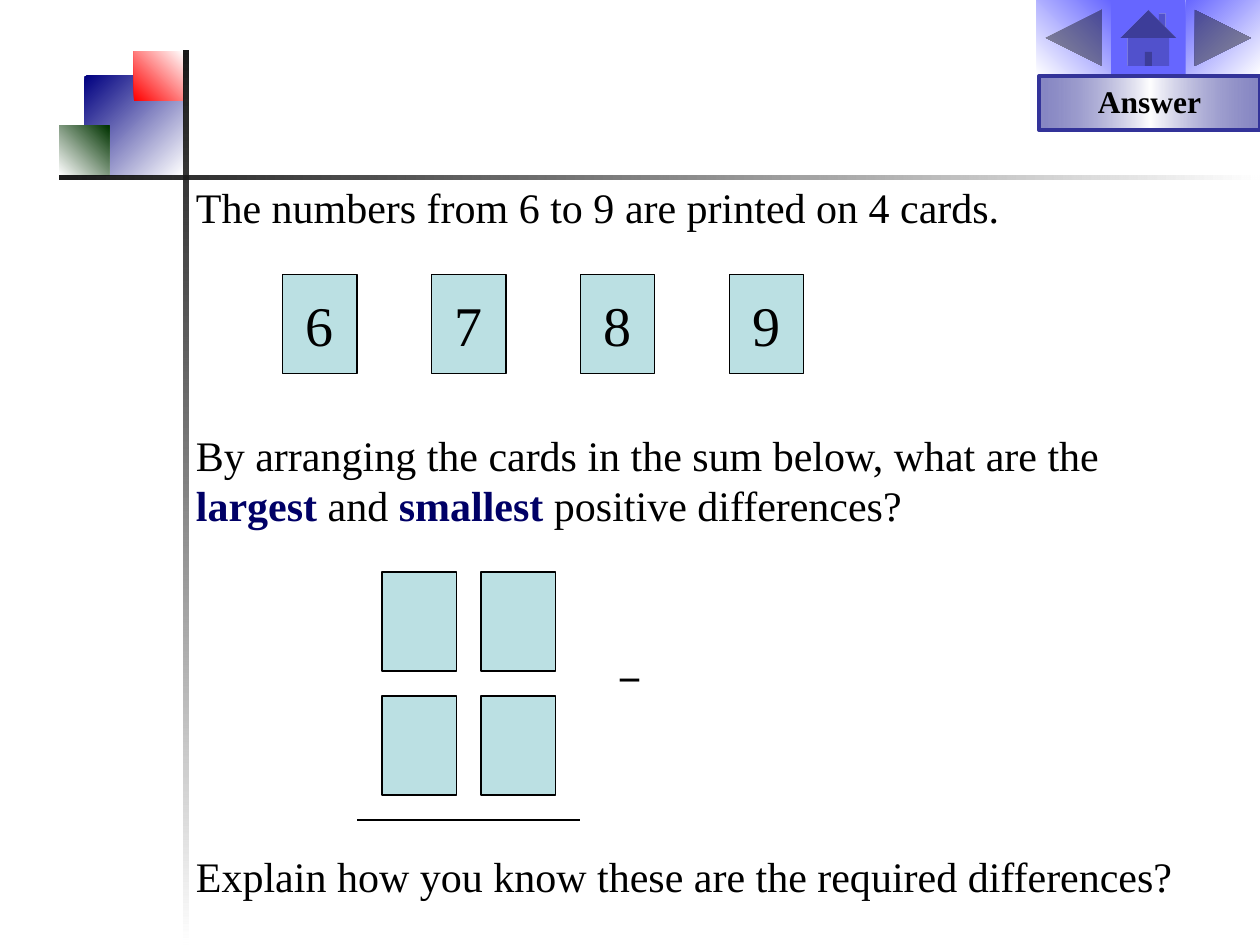
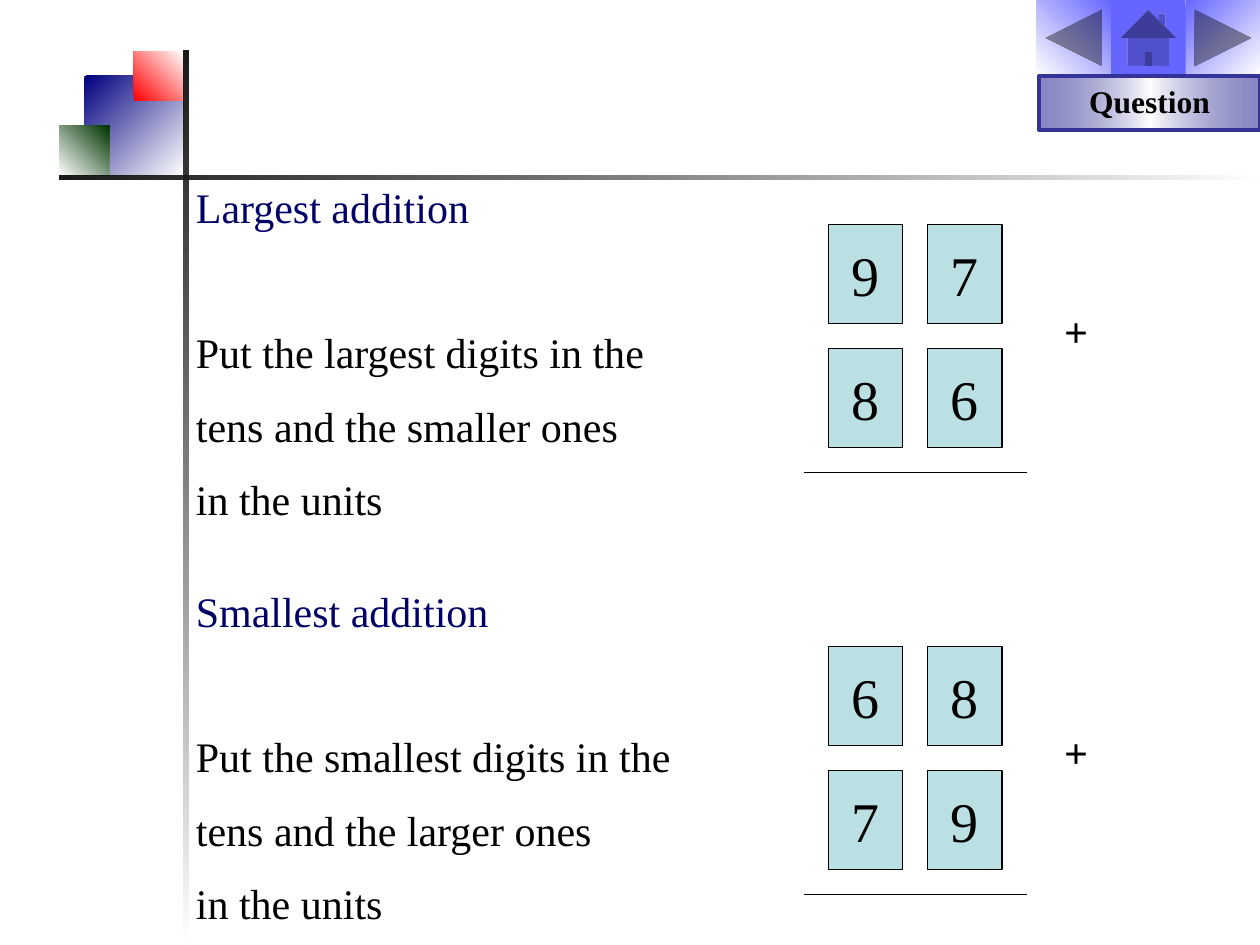
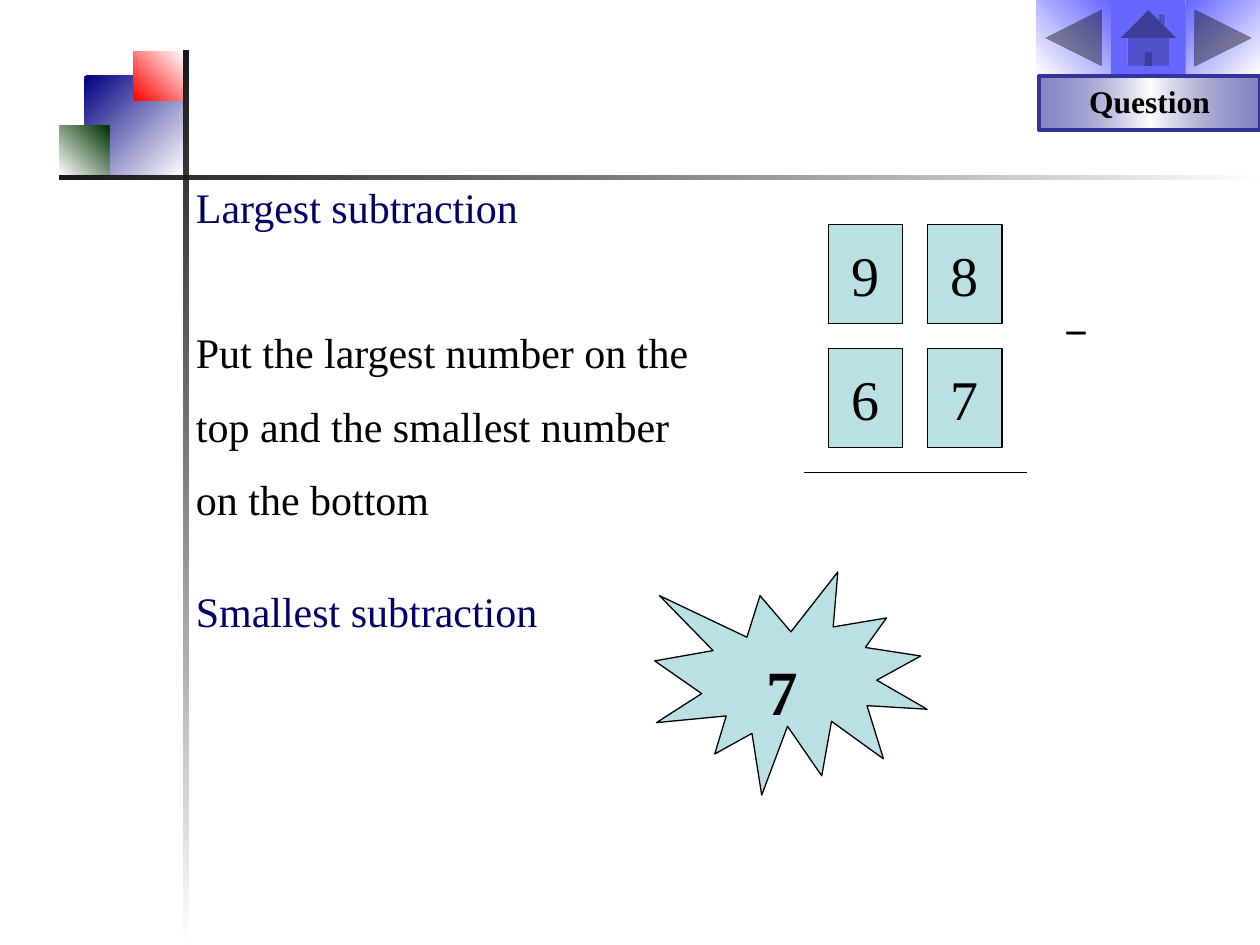
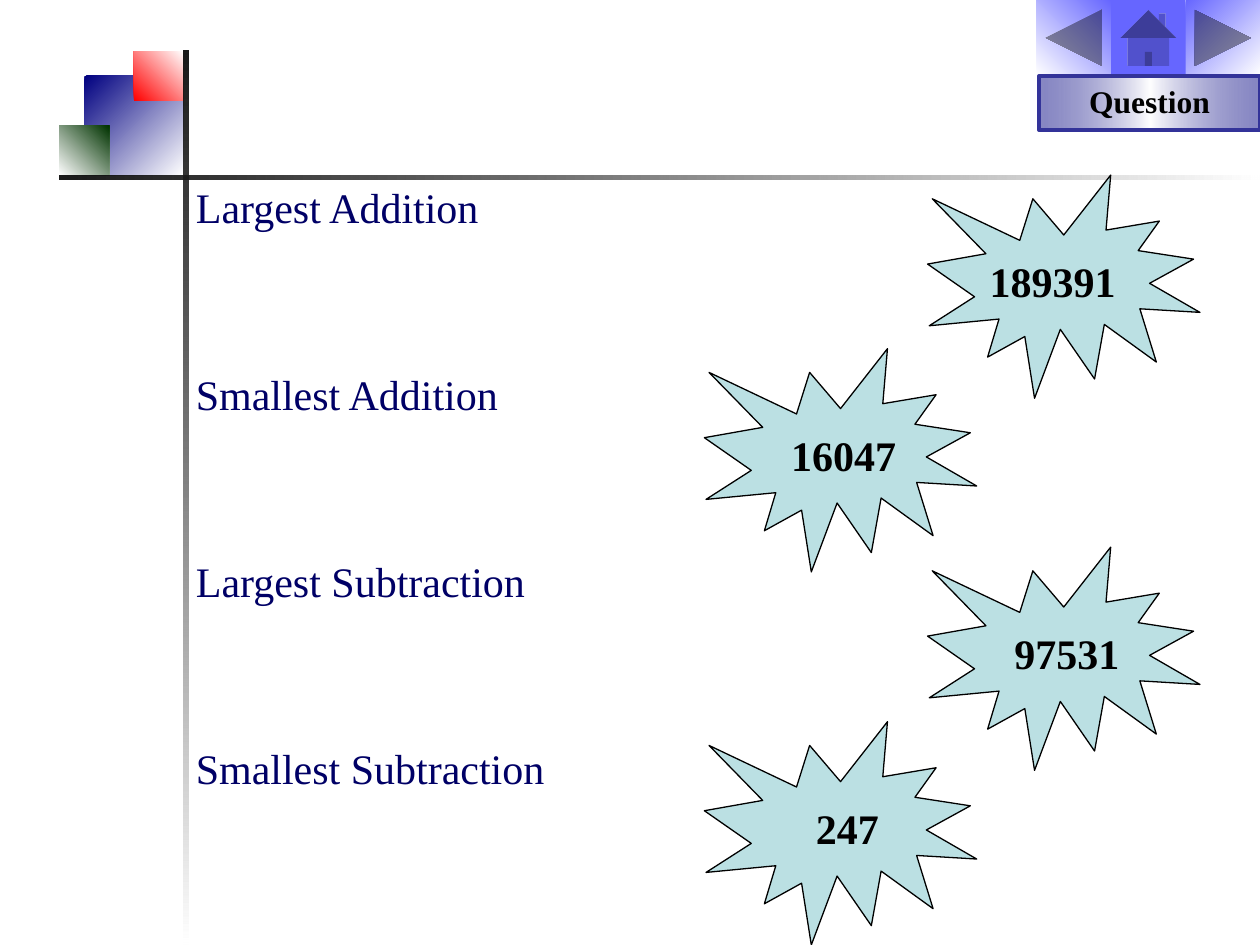
from lxml.etree import SubElement
from pptx import Presentation
from pptx.dml.color import RGBColor
from pptx.enum.shapes import MSO_CONNECTOR, MSO_SHAPE as Preset
from pptx.enum.text import MSO_ANCHOR as Anchor, MSO_AUTO_SIZE as AutoSize, PP_ALIGN as Align
from pptx.oxml import parse_xml
from pptx.oxml.ns import nsdecls, qn
from pptx.util import Cm, Pt

BLACK = RGBColor(0x00, 0x00, 0x00)
WHITE = RGBColor(0xFF, 0xFF, 0xFF)
NAVY = RGBColor(0x00, 0x00, 0x80)
RED = RGBColor(0xFF, 0x00, 0x00)
GREEN = RGBColor(0x00, 0x33, 0x00)
BUTTON_BLUE = RGBColor(0x66, 0x66, 0xFF)
LABEL_BLUE = RGBColor(0x33, 0x33, 0x99)
HEADING = RGBColor(0x00, 0x00, 0x66)
CARD_BLUE = RGBColor(0xBB, 0xE0, 0xE3)

FONT = "Times New Roman"
TEXT_LEFT, TEXT_TOP, TEXT_WIDTH = 3.7, 3.53, 20.06
CARD_WIDTH, CARD_HEIGHT = 1.5, 2
COLUMN_STEP, ROW_STEP = 2, 2.5
BURST_WIDTH, BURST_HEIGHT = 5.49, 4.5
LINE_GAP, SECTION_GAP, ANSWER_GAP = 13.3, 54.1, 78.1


def add_block(slide, preset, frame, paragraphs=(), size=24, align=Align.LEFT):
    """Add a preset shape, or a text box if preset is None.

    Each paragraph is (points before, [(text, colour, bold), ...]).
    """
    place = [Cm(length) for length in frame]
    if preset is None:
        shape = slide.shapes.add_textbox(*place)
        shape.text_frame.auto_size = AutoSize.SHAPE_TO_FIT_TEXT
    else:
        shape = slide.shapes.add_shape(preset, *place)
        shape.shadow.inherit = False
        shape.fill.solid()
        shape.fill.fore_color.rgb = CARD_BLUE
        shape.line.color.rgb = BLACK
        shape.line.width = Pt(0.75)
    text_frame = shape.text_frame
    text_frame.word_wrap = True
    for index, (gap, runs) in enumerate(paragraphs):
        paragraph = text_frame.add_paragraph() if index else text_frame.paragraphs[0]
        paragraph.alignment = align
        paragraph.space_before = Pt(gap)
        for text, colour, bold in runs:
            run = paragraph.add_run()
            run.text = text
            for name, value in {"name": FONT, "size": Pt(size), "bold": bold}.items():
                setattr(run.font, name, value)
            run.font.color.rgb = colour
    return shape


def paint_gradient(shape, angle, stops):
    """Fill with a linear gradient; each stop is (position %, colour, opacity %)."""
    stops_xml = "".join(
        f'<a:gs pos="{position * 1000}"><a:srgbClr val="{colour}">'
        f'<a:alpha val="{opacity * 1000}"/></a:srgbClr></a:gs>'
        for position, colour, opacity in stops
    )
    gradient = parse_xml(
        f'<a:gradFill rotWithShape="1" {nsdecls("a")}><a:gsLst>{stops_xml}</a:gsLst>'
        f'<a:lin ang="{angle * 60000}" scaled="1"/></a:gradFill>'
    )
    shape.fill.background()
    properties = shape.element.spPr
    properties.replace(properties.find(qn("a:noFill")), gradient)


presentation = Presentation()
presentation.slide_width = Cm(25.4)
presentation.slide_height = Cm(19.05)
blank_layout = presentation.slide_layouts[6]

# Shared decoration: (preset, frame, angle, start colour, end colour, start opacity)
DECORATION = [
    (Preset.RECTANGLE, (1.7, 1.53, 2, 2), 45, NAVY, WHITE, 100),
    (Preset.RECTANGLE, (2.7, 1.03, 1, 1), 315, RED, WHITE, 100),
    (Preset.RECTANGLE, (1.2, 2.53, 1, 1), 315, WHITE, GREEN, 100),
    (Preset.RECTANGLE, (3.7, 1.03, 0.1, 18.02), 90, BLACK, WHITE, 90),
    (Preset.RECTANGLE, (1.2, 3.53, 24.2, 0.1), 0, BLACK, WHITE, 90),
    (Preset.ACTION_BUTTON_BACK_OR_PREVIOUS, (20.9, 0, 1.5, 1.53), 315, WHITE, BUTTON_BLUE, 100),
    (Preset.ACTION_BUTTON_FORWARD_OR_NEXT, (23.9, 0, 1.5, 1.53), 45, BUTTON_BLUE, WHITE, 100),
    (Preset.ACTION_BUTTON_HOME, (22.4, 0, 1.5, 1.53), 0, BUTTON_BLUE, BUTTON_BLUE, 100),
]

# Text blocks are (top, width, paragraphs); sums are (left, top, digits by row, sign);
# bursts are (left, top, number, text offset, text width, text size).
SLIDES = [
    {
        "label": "Answer",
        "texts": [
            (TEXT_TOP, TEXT_WIDTH, [
                (0, [("The numbers from 6 to 9 are printed on 4 cards.", BLACK, False)]),
            ]),
            (8.53, TEXT_WIDTH, [
                (0, [
                    ("By arranging the cards in the sum below, what are the ", BLACK, False),
                    ("largest", HEADING, True),
                    (" and ", BLACK, False),
                    ("smallest", HEADING, True),
                    (" positive differences?", BLACK, False),
                ]),
            ]),
            (17.03, 21.7, [
                (0, [("Explain how you know these are the required differences?", BLACK, False)]),
            ]),
        ],
        "cards": [(5.7 + 3 * index, 5.53, digit) for index, digit in enumerate("6789")],
        "sums": [(7.7, 11.53, ["  ", "  "], "−")],
    },
    {
        "label": "Question",
        "texts": [
            (TEXT_TOP, TEXT_WIDTH, [
                (0, [("Largest addition", HEADING, False)]),
                (SECTION_GAP, [("Put the largest digits in the", BLACK, False)]),
                (LINE_GAP, [("tens and the smaller ones", BLACK, False)]),
                (LINE_GAP, [("in the units", BLACK, False)]),
            ]),
            (11.68, TEXT_WIDTH, [
                (0, [("Smallest addition", HEADING, False)]),
                (SECTION_GAP, [("Put the smallest digits in the", BLACK, False)]),
                (LINE_GAP, [("tens and the larger ones", BLACK, False)]),
                (LINE_GAP, [("in the units", BLACK, False)]),
            ]),
        ],
        "sums": [(16.7, 4.53, ["97", "86"], "+"), (16.7, 13.03, ["68", "79"], "+")],
    },
    {
        "label": "Question",
        "texts": [
            (TEXT_TOP, TEXT_WIDTH, [
                (0, [("Largest subtraction", HEADING, False)]),
                (SECTION_GAP, [("Put the largest number on the", BLACK, False)]),
                (LINE_GAP, [("top and the smallest number", BLACK, False)]),
                (LINE_GAP, [("on the bottom", BLACK, False)]),
            ]),
            (11.68, TEXT_WIDTH, [(0, [("Smallest subtraction", HEADING, False)])]),
        ],
        "sums": [(16.7, 4.53, ["98", "67"], "−")],
        "bursts": [(13.2, 11.53, "7", 2, 2.5, 36)],
    },
    {
        "label": "Question",
        "texts": [
            (TEXT_TOP, TEXT_WIDTH, [
                (0, [("Largest Addition", HEADING, False)]),
                (ANSWER_GAP, [("Smallest Addition", HEADING, False)]),
                (ANSWER_GAP, [("Largest Subtraction", HEADING, False)]),
                (ANSWER_GAP, [("Smallest Subtraction", HEADING, False)]),
            ]),
        ],
        "bursts": [
            (18.7, 3.53, "189391", 1, 3.5, 24),
            (14.2, 7.03, "16047", 1.5, 3, 24),
            (18.7, 11.03, "97531", 1.5, 3, 24),
            (14.2, 14.55, "247", 2, 2, 24),
        ],
    },
]

slides = [presentation.slides.add_slide(blank_layout) for _ in SLIDES]

# The decoration is built on the first slide, then moved to the layout all slides share.
for placeholder in list(blank_layout.placeholders):
    blank_layout.shapes.element.remove(placeholder.element)
decoration_shapes = []
for preset, frame, angle, start, end, opacity in DECORATION:
    shape = add_block(slides[0], preset, frame)
    shape.line.fill.background()
    if start == end:
        shape.fill.fore_color.rgb = start
    else:
        paint_gradient(shape, angle, [(0, start, opacity), (100, end, 100)])
    decoration_shapes.append(shape)
for shape in decoration_shapes:
    blank_layout.shapes.element.append(shape.element)

for slide, content in zip(slides, SLIDES):
    for top, width, paragraphs in content["texts"]:
        add_block(slide, None, (TEXT_LEFT, top, width, 1.27), paragraphs)

    cards = list(content.get("cards", []))
    for left, top, rows, sign in content.get("sums", []):
        for row, digits in enumerate(rows):
            for column, digit in enumerate(digits):
                cards.append((left + COLUMN_STEP * column, top + ROW_STEP * row, digit.strip()))
        rule_top = Cm(top + 2 * ROW_STEP)
        rule = slide.shapes.add_connector(
            MSO_CONNECTOR.STRAIGHT, Cm(left - 0.5), rule_top, Cm(left + 4), rule_top
        )
        rule.line.color.rgb = BLACK
        rule.line.width = Pt(0.75)
        SubElement(rule.element.spPr, qn("a:effectLst"))
        add_block(slide, None, (left + 4.5, top + 1.5, 2, 1.27), [(0, [(sign, BLACK, True)])])

    for left, top, digit in cards:
        paragraphs = [(0, [(digit, BLACK, False)])] if digit else []
        card = add_block(slide, Preset.RECTANGLE, (left, top, CARD_WIDTH, CARD_HEIGHT),
                         paragraphs, size=32, align=Align.CENTER)
        card.text_frame.vertical_anchor = Anchor.MIDDLE

    for left, top, number, offset, width, size in content.get("bursts", []):
        add_block(slide, Preset.EXPLOSION1, (left, top, BURST_WIDTH, BURST_HEIGHT))
        add_block(slide, None, (left + offset, top + 1.5, width, 1.27),
                  [(0, [(number, BLACK, True)])], size=size)

    label = add_block(slide, Preset.RECTANGLE, (20.95, 1.53, 4.45, 1.09),
                      [(0, [(content["label"], BLACK, True)])], size=18, align=Align.CENTER)
    label.text_frame.vertical_anchor = Anchor.TOP
    label.line.color.rgb = LABEL_BLUE
    label.line.width = Pt(2.25)
    paint_gradient(label, 0, [(0, LABEL_BLUE, 59), (50, WHITE, 100), (100, LABEL_BLUE, 59)])

presentation.save("out.pptx")
